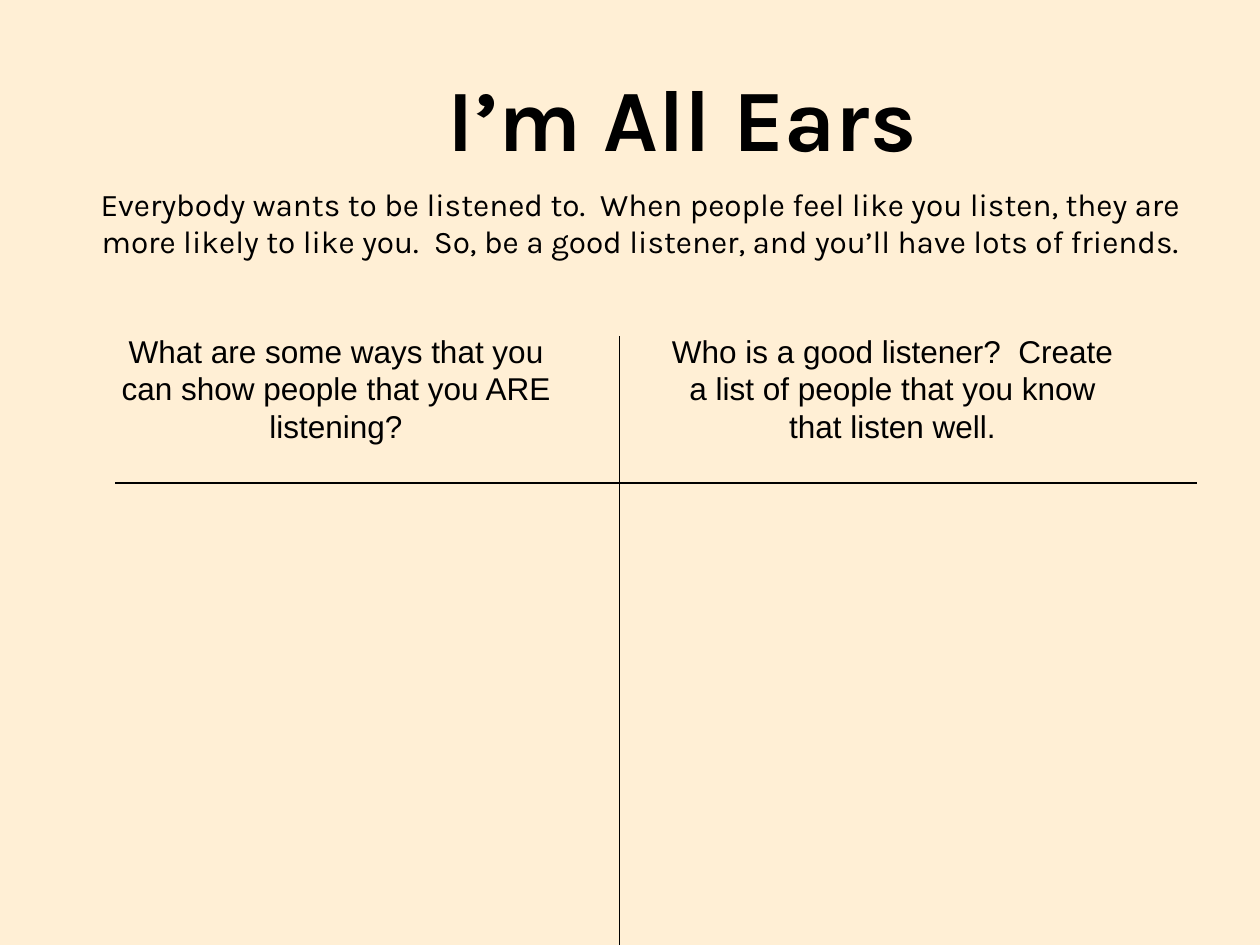
from dataclasses import dataclass

from lxml import etree
from pptx import Presentation
from pptx.dml.color import RGBColor
from pptx.enum.shapes import MSO_CONNECTOR
from pptx.enum.text import MSO_ANCHOR, MSO_AUTO_SIZE, PP_ALIGN
from pptx.oxml.ns import qn
from pptx.util import Pt

STRAIGHT = MSO_CONNECTOR.STRAIGHT
MIDDLE, TOP = MSO_ANCHOR.MIDDLE, MSO_ANCHOR.TOP
NO_AUTOFIT = MSO_AUTO_SIZE.NONE
CENTER = PP_ALIGN.CENTER
TITLE_ONLY = 5


@dataclass(frozen=True)
class Theme:
    """Colours, fonts and sizes of the worksheet."""

    background: RGBColor = RGBColor(0xFF, 0xEF, 0xD5)
    ink: RGBColor = RGBColor(0, 0, 0)
    heading_font: str = "Karla"
    question_font: str = "Arial"
    title_size: float = 50
    body_size: float = 18
    line_width: float = 0.75


THEME = Theme()


def write_text(shape, text, font_name, size, bold=False, anchor=TOP):
    """Fill a shape with one centred, wrapped paragraph."""
    frame = shape.text_frame
    frame.word_wrap = True
    frame.auto_size = NO_AUTOFIT
    frame.vertical_anchor = anchor
    paragraph = frame.paragraphs[0]
    paragraph.alignment = CENTER
    run = paragraph.add_run()
    run.text = text
    run.font.name = font_name
    run.font.size = Pt(size)
    run.font.bold = bold
    run.font.color.rgb = THEME.ink


def place_title(slide, text, left, top, width, height):
    """Move and format the title placeholder."""
    title = slide.shapes.title
    title.left, title.top = Pt(left), Pt(top)
    title.width, title.height = Pt(width), Pt(height)
    write_text(title, text, THEME.heading_font, THEME.title_size, True, MIDDLE)


def add_text(slide, text, font_name, left, top, width, height):
    """Add a text box in the body size."""
    box = slide.shapes.add_textbox(Pt(left), Pt(top), Pt(width), Pt(height))
    write_text(box, text, font_name, THEME.body_size)


def add_rule(slide, start_x, start_y, end_x, end_y):
    """Add a thin straight line without a shadow."""
    rule = slide.shapes.add_connector(
        STRAIGHT, Pt(start_x), Pt(start_y), Pt(end_x), Pt(end_y)
    )
    rule.line.color.rgb = THEME.ink
    rule.line.width = Pt(THEME.line_width)
    etree.SubElement(rule._element.spPr, qn("a:effectLst"))


def main():
    """Build the listening worksheet."""
    presentation = Presentation()
    presentation.slide_width, presentation.slide_height = Pt(720), Pt(540)
    slide = presentation.slides.add_slide(presentation.slide_layouts[TITLE_ONLY])
    slide.background.fill.solid()
    slide.background.fill.fore_color.rgb = THEME.background

    place_title(slide, "I’m All Ears", 96, 21.6, 588, 90)
    introduction = (
        "Everybody wants to be listened to.  When people feel like you listen, "
        "they are more likely to like you.  So, be a good listener, and you’ll "
        "have lots of friends."
    )
    add_text(slide, introduction, THEME.heading_font, 48, 102, 636, 50.4)

    questions = (
        (54, "What are some ways that you can show people that you ARE listening?"),
        (372, "Who is a good listener?  Create a list of people that you know "
              "that listen well."),
    )
    for left, question in questions:
        add_text(slide, question, THEME.question_font, left, 186, 276, 72)

    add_rule(slide, 66, 276, 684, 276)
    add_rule(slide, 354, 192, 354, 540)
    presentation.save("out.pptx")


if __name__ == "__main__":
    main()
